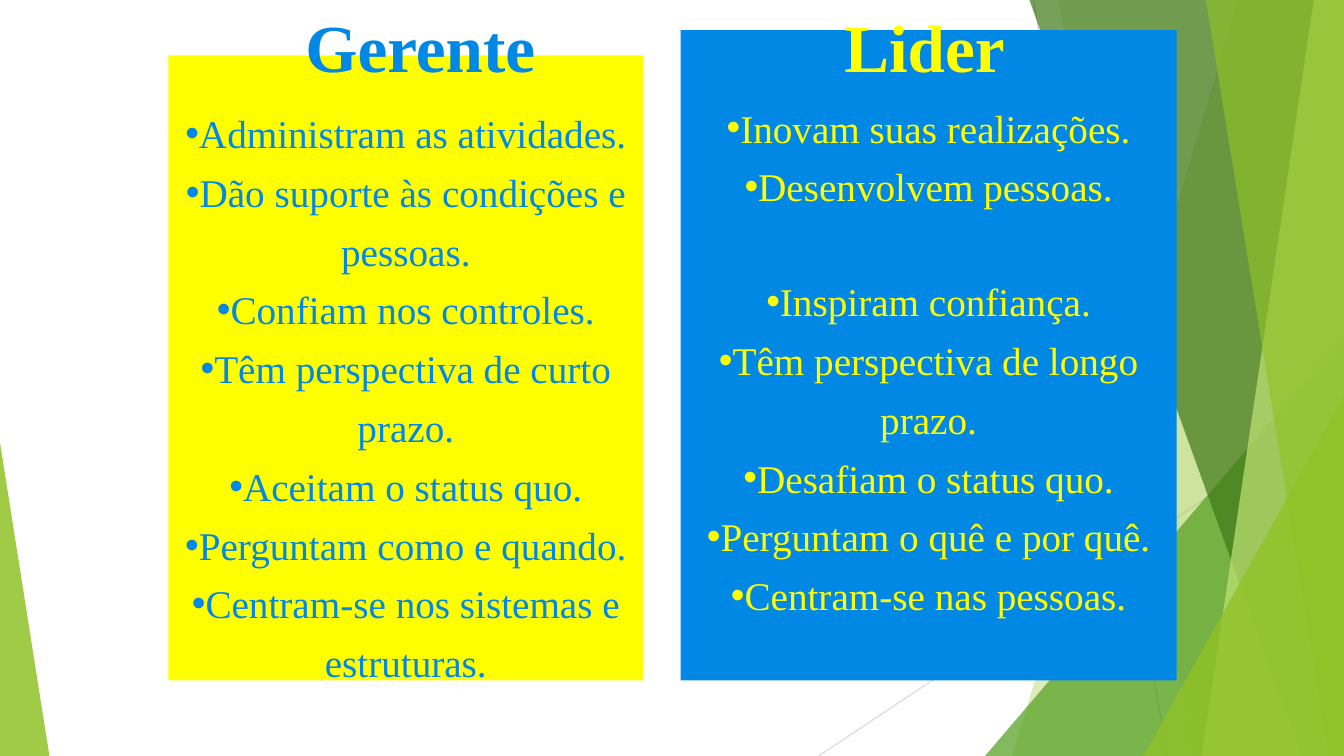
import pptx
import pptx.util
import pptx.dml.color
import pptx.enum.shapes
import pptx.enum.text
import pptx.oxml.ns
from lxml import etree

Inches = pptx.util.Inches
Pt = pptx.util.Pt
qn = pptx.oxml.ns.qn
FONT = "Times New Roman"
WIDE, HIGH = 13.33, 7.5
HUES = {
    "blue": "0088E4", "yellow": "FFFF00", "lime": "90C226",
    "green": "54A021", "dark": "3F7819", "pale": "C0E474",
    "gray": "BFBFBF", "light": "D9D9D9",
}
BANDS = [
    (12.28, 10.04, "lime", 30),
    (10.5, 11.83, "lime", 20),
    (10.21, 12.91, "dark", 70),
    (13.03, 11.92, "pale", 70),
    (11.96, 13.18, "lime", 65),
]
BOSS = [
    "Administram as atividades.",
    "Dão suporte às condições e pessoas.",
    "Confiam nos controles.",
    "Têm perspectiva de curto prazo.",
    "Aceitam o status quo.",
    "Perguntam como e quando.",
    "Centram-se nos sistemas e estruturas.",
]
LEADER = [
    "Inovam suas realizações.",
    "Desenvolvem pessoas.",
    "Inspiram confiança.",
    "Têm perspectiva de longo prazo.",
    "Desafiam o status quo.",
    "Perguntam o quê e por quê.",
    "Centram-se nas pessoas.",
]


def tint(hue):
    return pptx.dml.color.RGBColor.from_string(HUES[hue])


def paint(shape, hue, alpha=100):
    shape.shadow.inherit = False
    shape.fill.solid()
    shape.fill.fore_color.rgb = tint(hue)
    shape.line.fill.background()
    if alpha < 100:
        color = shape.fill._xPr.find(".//" + qn("a:srgbClr"))
        etree.SubElement(color, qn("a:alpha"), val=str(alpha * 1000))


def line(slide, start, end, hue):
    kind = pptx.enum.shapes.MSO_CONNECTOR.STRAIGHT
    rule = slide.shapes.add_connector(kind, *map(Inches, start + end))
    rule.line.color.rgb = tint(hue)
    rule.line.width = Pt(0.75)
    etree.SubElement(rule._element.spPr, qn("a:effectLst"))


def band(slide, top, foot, hue, alpha):
    points = [(WIDE, 0), (WIDE, HIGH), (foot, HIGH)]
    form = slide.shapes.build_freeform(Inches(top), 0, scale=1.0)
    form.add_line_segments([tuple(map(Inches, p)) for p in points], close=True)
    paint(form.convert_to_shape(), hue, alpha)


def wedge(slide, box, tip, hue, alpha):
    kind = pptx.enum.shapes.MSO_SHAPE.ISOSCELES_TRIANGLE
    shape = slide.shapes.add_shape(kind, *map(Inches, box))
    shape.adjustments[0] = tip
    paint(shape, hue, alpha)


def write(para, text, size, hue, bold=False):
    para.alignment = pptx.enum.text.PP_ALIGN.CENTER
    run = para.add_run()
    run.text = text
    run.font.name = FONT
    run.font.size = Pt(size)
    run.font.bold = bold
    run.font.color.rgb = tint(hue)


def bullet(para, hue):
    props = para._p.get_or_add_pPr()
    props.set("marL", "0")
    props.set("indent", "0")
    color = etree.SubElement(props, qn("a:buClr"))
    etree.SubElement(color, qn("a:srgbClr"), val=HUES[hue])
    etree.SubElement(props, qn("a:buFont"), typeface="Arial")
    etree.SubElement(props, qn("a:buChar"), char="•")


def panel(slide, box, fill, ink, items, inset, gap=None):
    kind = pptx.enum.shapes.MSO_SHAPE.RECTANGLE
    shape = slide.shapes.add_shape(kind, *map(Inches, box))
    paint(shape, fill)
    frame = shape.text_frame
    frame.word_wrap = True
    frame.vertical_anchor = pptx.enum.text.MSO_ANCHOR.MIDDLE
    frame.margin_top, frame.margin_bottom = map(Inches, inset)
    for i, text in enumerate(items):
        para = frame.add_paragraph() if i else frame.paragraphs[0]
        bullet(para, ink)
        para.line_spacing = 1.25
        if i and i == gap:
            para.space_before = Pt(40)
        write(para, text, 28, ink)


def head(slide, left, text, hue):
    box = slide.shapes.add_textbox(Inches(left), 0, Inches(5), Inches(0.9))
    box.text_frame.word_wrap = True
    write(box.text_frame.paragraphs[0], text, 48, hue, True)


def main():
    deck = pptx.Presentation()
    deck.slide_width, deck.slide_height = Inches(WIDE), Inches(HIGH)
    slide = deck.slides.add_slide(deck.slide_layouts[6])
    line(slide, (10.25, 0), (11.58, HIGH), "gray")
    line(slide, (WIDE, 4.03), (8.12, HIGH), "light")
    for item in BANDS[:2]:
        band(slide, *item)
    wedge(slide, (9.77, 3.33, 3.56, 4.17), 1, "green", 72)
    for item in BANDS[2:]:
        band(slide, *item)
    wedge(slide, (11.34, 3.93, 1.99, 3.57), 1, "lime", 80)
    wedge(slide, (0, 4.39, 0.49, 3.11), 0, "lime", 85)
    panel(slide, (6.75, 0.3, 4.92, 6.45), "blue", "yellow", LEADER, (0.05, 0.05), 2)
    panel(slide, (1.67, 0.55, 4.71, 6.2), "yellow", "blue", BOSS, (0.53, 0.06))
    head(slide, 1.67, "Gerente", "blue")
    head(slide, 6.67, "Lider", "yellow")
    deck.save("out.pptx")


if __name__ == "__main__":
    main()
